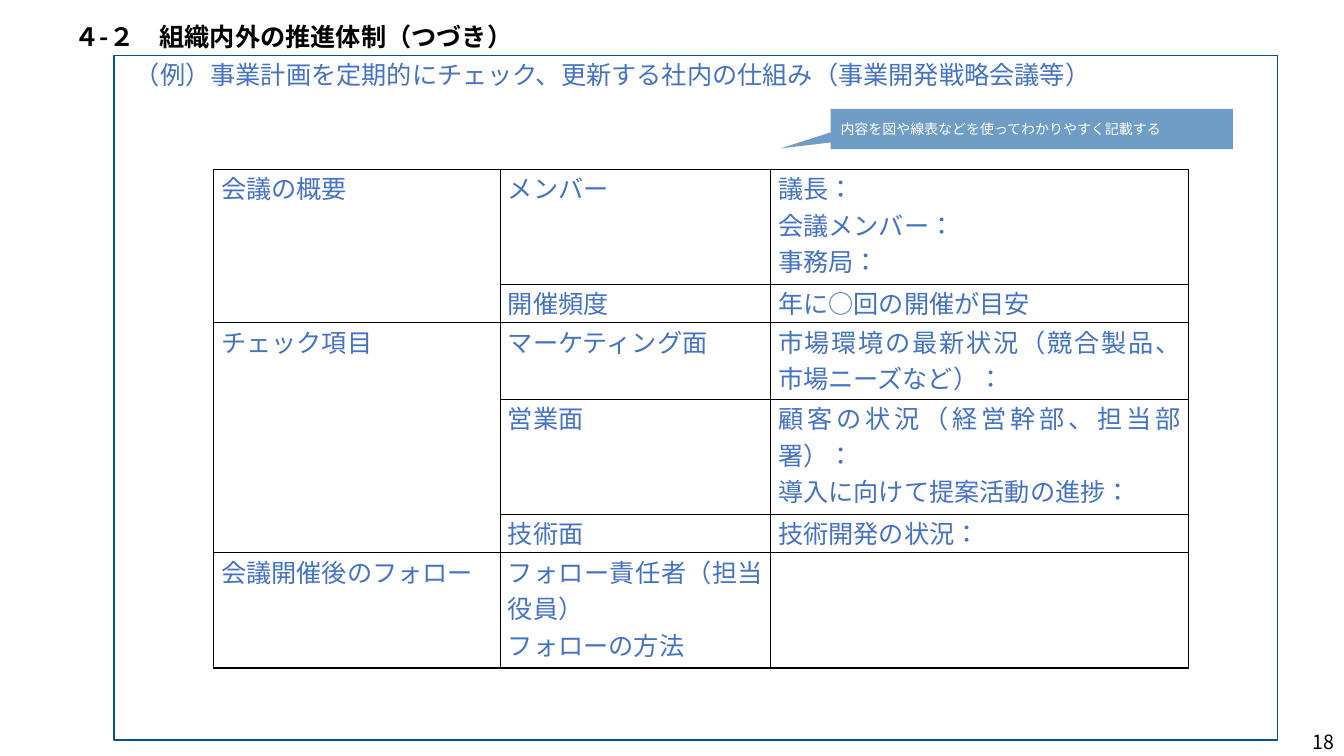
"""Build the slide on the internal and external promotion structure."""
import lxml.etree
import pptx
import pptx.dml.color
import pptx.enum.lang
import pptx.enum.shapes
import pptx.enum.text
import pptx.oxml.ns
import pptx.util

Pt = pptx.util.Pt
qn = pptx.oxml.ns.qn
SubElement = lxml.etree.SubElement
Align = pptx.enum.text.PP_ALIGN
Anchor = pptx.enum.text.MSO_ANCHOR
Shapes = pptx.enum.shapes.MSO_SHAPE
COLORS = {"black": "000000", "blue": "4472C4", "navy": "005298", "white": "FFFFFF"}
JAPANESE_FONT = "Noto Sans CJK JP"


def rgb(name):
    return pptx.dml.color.RGBColor.from_string(COLORS[name])


def format_text(paragraph, size, color, font="Arial", bold=False, align=Align.LEFT):
    paragraph.alignment = align
    for run in paragraph.runs:
        run.font.size = Pt(size)
        run.font.bold = bold
        run.font.color.rgb = rgb(color)
        run.font.name = font
        run.font.language_id = pptx.enum.lang.MSO_LANGUAGE_ID.JAPANESE
        SubElement(run.font._element, qn("a:ea"), typeface=JAPANESE_FONT)


presentation = pptx.Presentation()
presentation.slide_width = Pt(960)
presentation.slide_height = Pt(540)
slide = presentation.slides.add_slide(presentation.slide_layouts[6])
shapes = slide.shapes

page_number = shapes.add_textbox(Pt(898.5), Pt(519), Pt(61.5), Pt(21))
page_number.text_frame.word_wrap = True
page_number.text_frame.vertical_anchor = Anchor.MIDDLE
page_number.text_frame.text = "18"
format_text(page_number.text_frame.paragraphs[0], 14, "black", JAPANESE_FONT, align=Align.RIGHT)

heading = shapes.add_textbox(Pt(32.4), Pt(11.5), Pt(879), Pt(57))
heading.text_frame.word_wrap = True
heading.text_frame.text = (
    "４-２　組織内外の推進体制（つづき）\n"
    "（例）事業計画を定期的にチェック、更新する社内の仕組み（事業開発戦略会議等）"
)
heading_styles = [("black", True, 56.2, -42.5), ("blue", False, 76.3, -19.4)]
for paragraph, (color, bold, margin, indent) in zip(heading.text_frame.paragraphs, heading_styles):
    format_text(paragraph, 18, color, JAPANESE_FONT, bold)
    paragraph.space_before = Pt(6)
    properties = paragraph._p.get_or_add_pPr()
    properties.set("marL", str(Pt(margin)))
    properties.set("indent", str(Pt(indent)))

frame = shapes.add_shape(Shapes.RECTANGLE, Pt(81.4), Pt(39.6), Pt(831), Pt(489))
frame.shadow.inherit = False
frame.fill.background()
frame.line.color.rgb = rgb("navy")
frame.line.width = Pt(1)

column_widths = [204.8, 193, 298.4]
row_heights = [82.2, 27.4, 54.8, 82.2, 27.4, 82.2]
rows = [
    ("会議の概要", "メンバー", "議長：\n会議メンバー：\n事務局："),
    ("", "開催頻度", "年に○回の開催が目安"),
    ("チェック項目", "マーケティング面", "市場環境の最新状況（競合製品、市場ニーズなど）："),
    ("", "営業面", "顧客の状況（経営幹部、担当部署）：\n導入に向けて提案活動の進捗："),
    ("", "技術面", "技術開発の状況："),
    ("会議開催後のフォロー", "フォロー責任者（担当役員）\nフォローの方法", ""),
]
table = shapes.add_table(
    len(rows), len(column_widths), Pt(152.6), Pt(121), Pt(sum(column_widths)), Pt(sum(row_heights))
).table
table.first_row = False
table.horz_banding = False
for column, width in zip(table.columns, column_widths):
    column.width = Pt(width)
for row, height, texts in zip(table.rows, row_heights, rows):
    row.height = Pt(height)
    for cell, text in zip(row.cells, texts):
        cell.margin_left = cell.margin_right = Pt(5.4)
        cell.margin_top = cell.margin_bottom = 0
        cell.text_frame.text = text
        for paragraph in cell.text_frame.paragraphs:
            format_text(paragraph, 18, "blue", align=Align.JUSTIFY)
        cell_properties = cell._tc.get_or_add_tcPr()
        for side in ("a:lnL", "a:lnR", "a:lnT", "a:lnB"):
            border = SubElement(cell_properties, qn(side), w=str(Pt(1)))
            border_fill = SubElement(border, qn("a:solidFill"))
            SubElement(border_fill, qn("a:srgbClr"), val=COLORS["black"])
        cell.fill.background()
for first, last in [(0, 1), (2, 4)]:
    table.cell(first, 0).merge(table.cell(last, 0))

callout = shapes.add_shape(Shapes.RECTANGULAR_CALLOUT, Pt(593.3), Pt(77.8), Pt(287.3), Pt(28.8))
callout.shadow.inherit = False
callout.adjustments[0] = -0.625
callout.adjustments[1] = 0.481
callout.fill.solid()
callout.fill.fore_color.rgb = rgb("navy")
callout_color = callout._element.spPr.find(".//" + qn("a:srgbClr"))
SubElement(callout_color, qn("a:alpha"), val="56000")
callout.line.fill.background()
callout.text_frame.word_wrap = True
callout.text_frame.vertical_anchor = Anchor.MIDDLE
callout.text_frame.text = "内容を図や線表などを使ってわかりやすく記載する"
format_text(callout.text_frame.paragraphs[0], 10, "white")

presentation.save("out.pptx")
